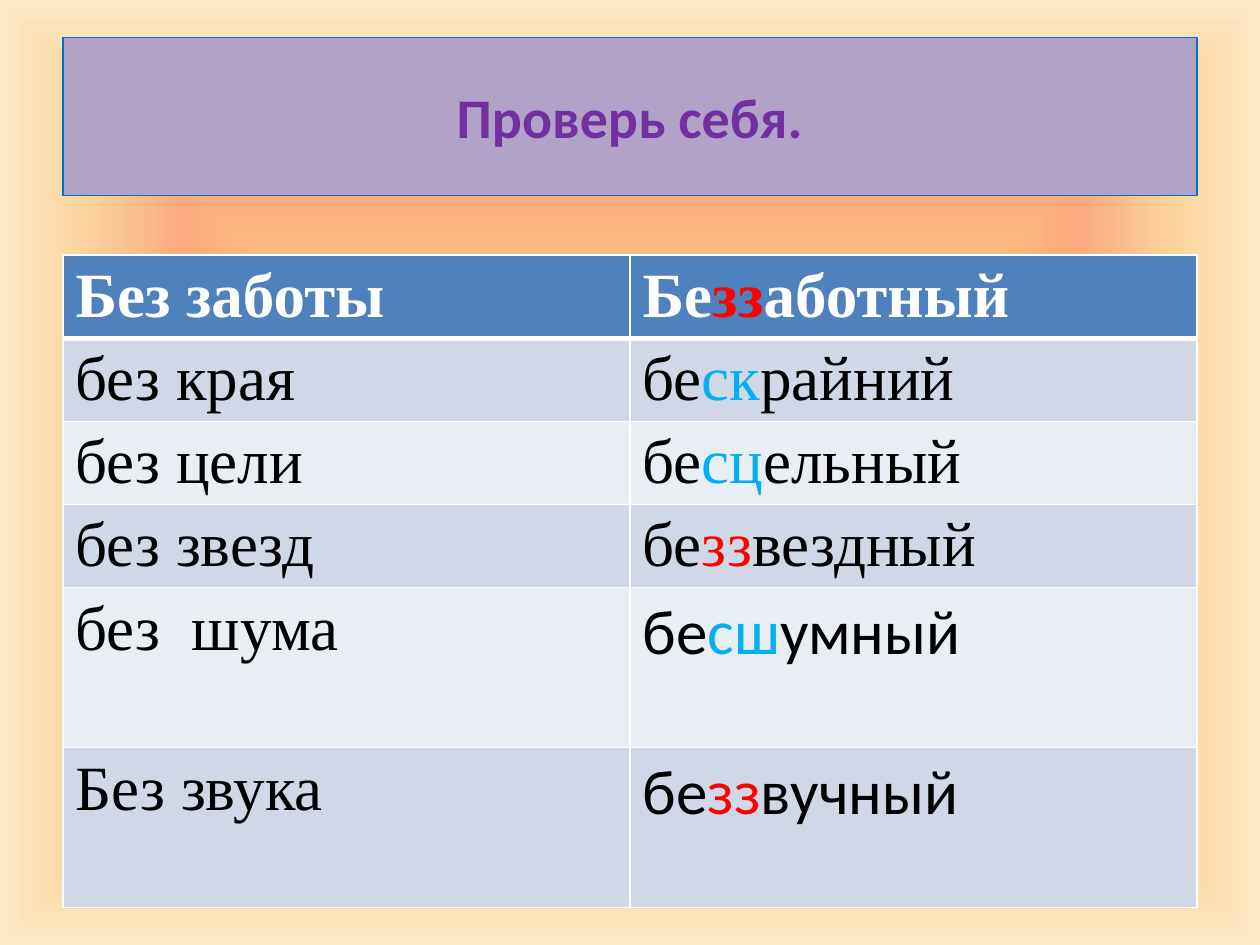
"""Build a self-check slide pairing Russian phrases with their prefixed adjectives."""
from lxml import etree
from pptx import Presentation
from pptx.dml.color import RGBColor
from pptx.enum.shapes import MSO_SHAPE
from pptx.enum.text import MSO_ANCHOR, PP_ALIGN
from pptx.oxml.ns import qn
from pptx.util import Inches, Pt

RECTANGLE = MSO_SHAPE.RECTANGLE
MIDDLE = MSO_ANCHOR.MIDDLE
CENTER = PP_ALIGN.CENTER

WHITE = RGBColor(0xFF, 0xFF, 0xFF)
BLACK = RGBColor(0x00, 0x00, 0x00)
RED = RGBColor(0xFF, 0x00, 0x00)
SKY = RGBColor(0x00, 0xB0, 0xF0)
BLUE = RGBColor(0x00, 0x70, 0xC0)
PURPLE = RGBColor(0x70, 0x30, 0xA0)
LILAC = RGBColor(0xB3, 0xA2, 0xC7)
HEADER_FILL = RGBColor(0x4F, 0x81, 0xBD)
BAND_FILLS = [RGBColor(0xE9, 0xED, 0xF4), RGBColor(0xD0, 0xD8, 0xE8)]
BACKGROUND_STOPS = [
    (18, RGBColor(0xFE, 0xE7, 0xF2)),
    (36, RGBColor(0xFA, 0xC7, 0x7D)),
    (61, RGBColor(0xFB, 0xA9, 0x7D)),
    (82, RGBColor(0xFB, 0xD4, 0x9C)),
    (100, RGBColor(0xFB, 0xEA, 0xC7)),
    (100, RGBColor(0xFE, 0xE7, 0xF2)),
]
SERIF, SANS = "Times New Roman", "Calibri"
ROWS = [
    ("Без заботы", ("Бе", "зз", "аботный"), RED, SERIF),
    ("без края", ("бе", "ск", "райний"), SKY, SERIF),
    ("без цели", ("бе", "сц", "ельный"), SKY, SERIF),
    ("без звезд", ("бе", "зз", "вездный"), RED, SERIF),
    ("без  шума", ("бе", "сш", "умный"), SKY, SANS),
    ("Без звука", ("бе", "зз", "вучный"), RED, SANS),
]
ROW_HEIGHTS = [0.66] * 4 + [1.27] * 2


def add_color(parent, color):
    etree.SubElement(parent, qn("a:srgbClr"), val=str(color))


def set_borders(cell, widths):
    properties = cell._tc.get_or_add_tcPr()
    for index, (side, width) in enumerate(widths.items()):
        line = etree.Element(qn(f"a:ln{side}"), w=str(Pt(width)))
        add_color(etree.SubElement(line, qn("a:solidFill")), WHITE)
        properties.insert(index, line)


presentation = Presentation()
presentation.slide_width, presentation.slide_height = Inches(10), Inches(7.5)
width, height = presentation.slide_width, presentation.slide_height
slide = presentation.slides.add_slide(presentation.slide_layouts[6])

background = slide.background.fill
background.gradient()
gradient = slide._element.find(".//" + qn("a:gradFill"))
for child in list(gradient):
    gradient.remove(child)
stops = etree.SubElement(gradient, qn("a:gsLst"))
for position, color in BACKGROUND_STOPS:
    add_color(etree.SubElement(stops, qn("a:gs"), pos=str(position * 1000)), color)
shape_path = etree.SubElement(gradient, qn("a:path"), path="shape")
etree.SubElement(shape_path, qn("a:fillToRect"), l="50000", t="50000", r="50000", b="50000")

margin = int(width * 0.05)
content_width = width - 2 * margin
title = slide.shapes.add_shape(
    RECTANGLE, margin, int(height * 0.04), content_width, int(height / 6))
title.shadow.inherit = False
title.fill.solid()
title.fill.fore_color.rgb = LILAC
title.line.color.rgb = BLUE
title.line.width = Pt(0.75)
title.text_frame.word_wrap = True
title.text_frame.vertical_anchor = MIDDLE
paragraph = title.text_frame.paragraphs[0]
paragraph.text = "Проверь себя."
paragraph.alignment = CENTER
paragraph.font.name = SANS
paragraph.font.size = Pt(32)
paragraph.font.bold = True
paragraph.font.color.rgb = PURPLE

table = slide.shapes.add_table(
    len(ROWS), 2, margin, int(height * 0.27), content_width,
    Inches(sum(ROW_HEIGHTS))).table
for row_index, (phrase, parts, accent, word_font) in enumerate(ROWS):
    table.rows[row_index].height = Inches(ROW_HEIGHTS[row_index])
    is_header = row_index == 0
    text_color = WHITE if is_header else BLACK
    for column, (pieces, font_name) in enumerate([((phrase,), SERIF), (parts, word_font)]):
        cell = table.cell(row_index, column)
        cell.fill.solid()
        cell.fill.fore_color.rgb = HEADER_FILL if is_header else BAND_FILLS[row_index % 2]
        set_borders(cell, {"L": 1, "R": 1, "T": 3 if row_index == 1 else 1,
                           "B": 3 if is_header else 1})
        paragraph = cell.text_frame.paragraphs[0]
        paragraph.font.name = font_name
        paragraph.font.size = Pt(36)
        paragraph.font.bold = is_header
        for piece_index, piece in enumerate(pieces):
            run = paragraph.add_run()
            run.text = piece
            run.font.color.rgb = accent if piece_index == 1 else text_color

presentation.save("out.pptx")
